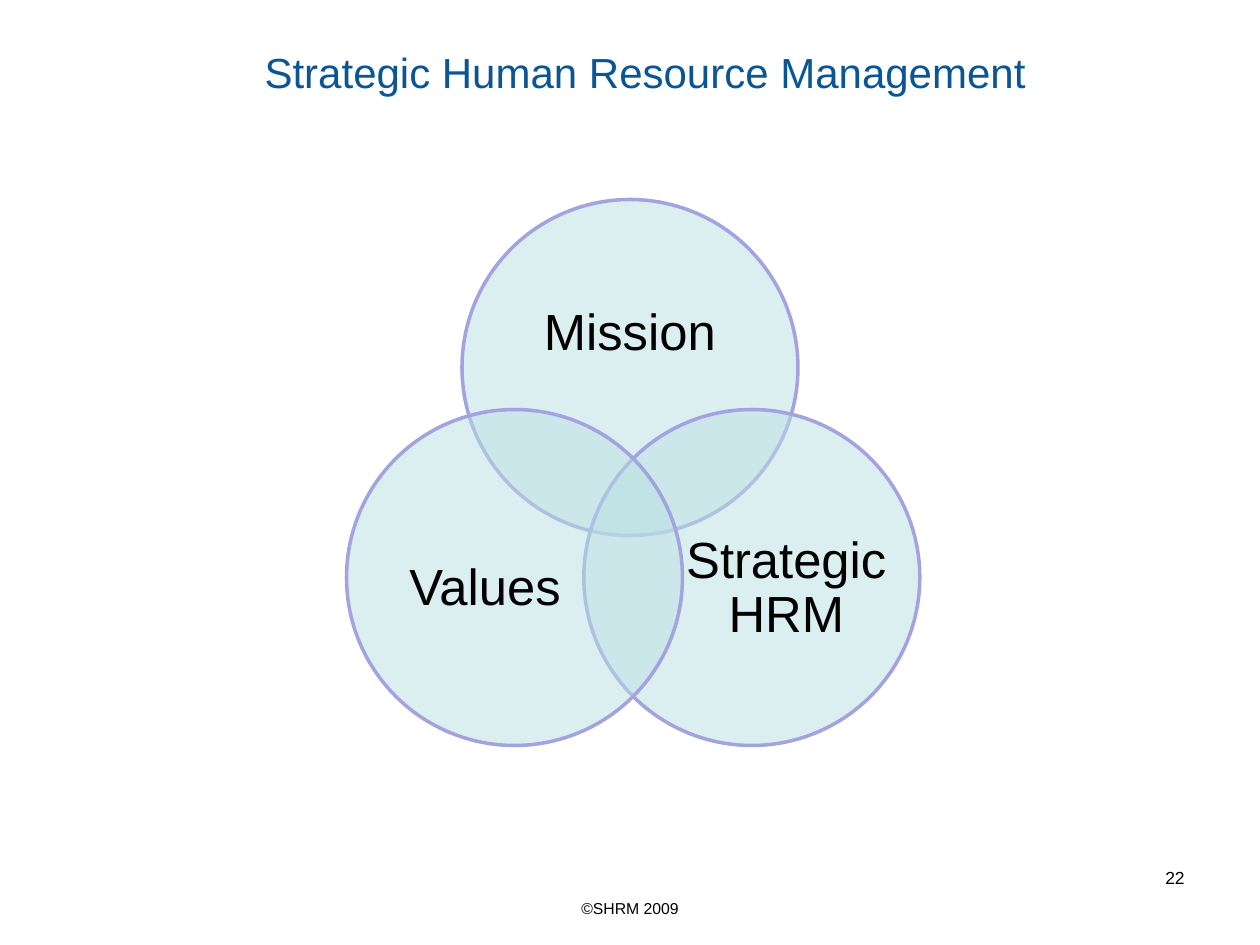
from dataclasses import dataclass

from lxml.etree import SubElement
from pptx import Presentation
from pptx.dml.color import RGBColor
from pptx.enum.shapes import MSO_SHAPE
from pptx.enum.text import MSO_ANCHOR, PP_ALIGN
from pptx.oxml.ns import qn
from pptx.util import Inches, Pt

COLUMNS, ROWS = 120, 90
CIRCLE_SPAN = 32


@dataclass(frozen=True)
class Theme:
    font: str = "Arial"
    heading: RGBColor = RGBColor(0x0B, 0x55, 0x94)
    ink: RGBColor = RGBColor(0, 0, 0)
    circle_fill: RGBColor = RGBColor(0xBB, 0xE0, 0xE3)
    circle_line: RGBColor = RGBColor(0xA3, 0xA3, 0xE0)
    opacity: int = 50
    outline: float = 2
    title_size: float = 24
    label_size: float = 29
    number_size: float = 10
    copyright_size: float = 9


@dataclass(frozen=True)
class Area:
    column: float
    row: float
    columns: float
    rows: float


@dataclass(frozen=True)
class Circle:
    label: str
    column: float
    row: float
    label_area: Area


THEME = Theme()
CIRCLES = [
    Circle("Mission", 44, 19, Area(48.25, 24.6, 23.5, 14.4)),
    Circle("Strategic HRM", 55.6, 39, Area(65.3, 47.3, 19.2, 17.6)),
    Circle("Values", 33, 39, Area(36.6, 47.3, 19.2, 17.6)),
]

deck = Presentation()
deck.slide_width, deck.slide_height = Inches(10), Inches(7.5)
slide = deck.slides.add_slide(deck.slide_layouts[5])


def bounds(area: Area) -> tuple[int, int, int, int]:
    cell_width = deck.slide_width / COLUMNS
    cell_height = deck.slide_height / ROWS
    return (round(area.column * cell_width), round(area.row * cell_height),
            round(area.columns * cell_width), round(area.rows * cell_height))


def write(holder, text: str, *, size: float, color: RGBColor = THEME.ink,
          align=PP_ALIGN.CENTER, anchor=MSO_ANCHOR.TOP,
          spacing: float = 1.0, inset: bool = True) -> None:
    frame = holder.text_frame
    frame.word_wrap = True
    frame.vertical_anchor = anchor
    if not inset:
        frame.margin_left = frame.margin_right = 0
        frame.margin_top = frame.margin_bottom = 0
    paragraph = frame.paragraphs[0]
    paragraph.alignment = align
    paragraph.line_spacing = spacing
    run = paragraph.add_run()
    run.text = text
    run.font.name = THEME.font
    run.font.size = Pt(size)
    run.font.color.rgb = color


def add_text(area: Area, text: str, **text_format) -> None:
    write(slide.shapes.add_textbox(*bounds(area)), text, **text_format)


def draw_circle(circle: Circle) -> None:
    area = Area(circle.column, circle.row, CIRCLE_SPAN, CIRCLE_SPAN)
    disc = slide.shapes.add_shape(MSO_SHAPE.OVAL, *bounds(area))
    disc.shadow.inherit = False
    disc.fill.solid()
    disc.fill.fore_color.rgb = THEME.circle_fill
    fill_color = disc.fill._xPr.find(qn("a:solidFill"))[0]
    SubElement(fill_color, qn("a:alpha")).set("val", str(THEME.opacity * 1000))
    disc.line.color.rgb = THEME.circle_line
    disc.line.width = Pt(THEME.outline)
    add_text(circle.label_area, circle.label, size=THEME.label_size,
             anchor=MSO_ANCHOR.MIDDLE, spacing=0.9, inset=False)


title = slide.shapes.title
title.left, title.top, title.width, title.height = bounds(Area(24, 3.6, 90, 6.4))
write(title, "Strategic Human Resource Management", size=THEME.title_size,
      color=THEME.heading, align=PP_ALIGN.LEFT, anchor=MSO_ANCHOR.MIDDLE)
add_text(Area(41, 85, 38, 3.2), "©SHRM 2009", size=THEME.copyright_size)
add_text(Area(86, 82, 28, 6.2), "22", size=THEME.number_size, align=PP_ALIGN.RIGHT)
for circle in CIRCLES:
    draw_circle(circle)

deck.save("out.pptx")
